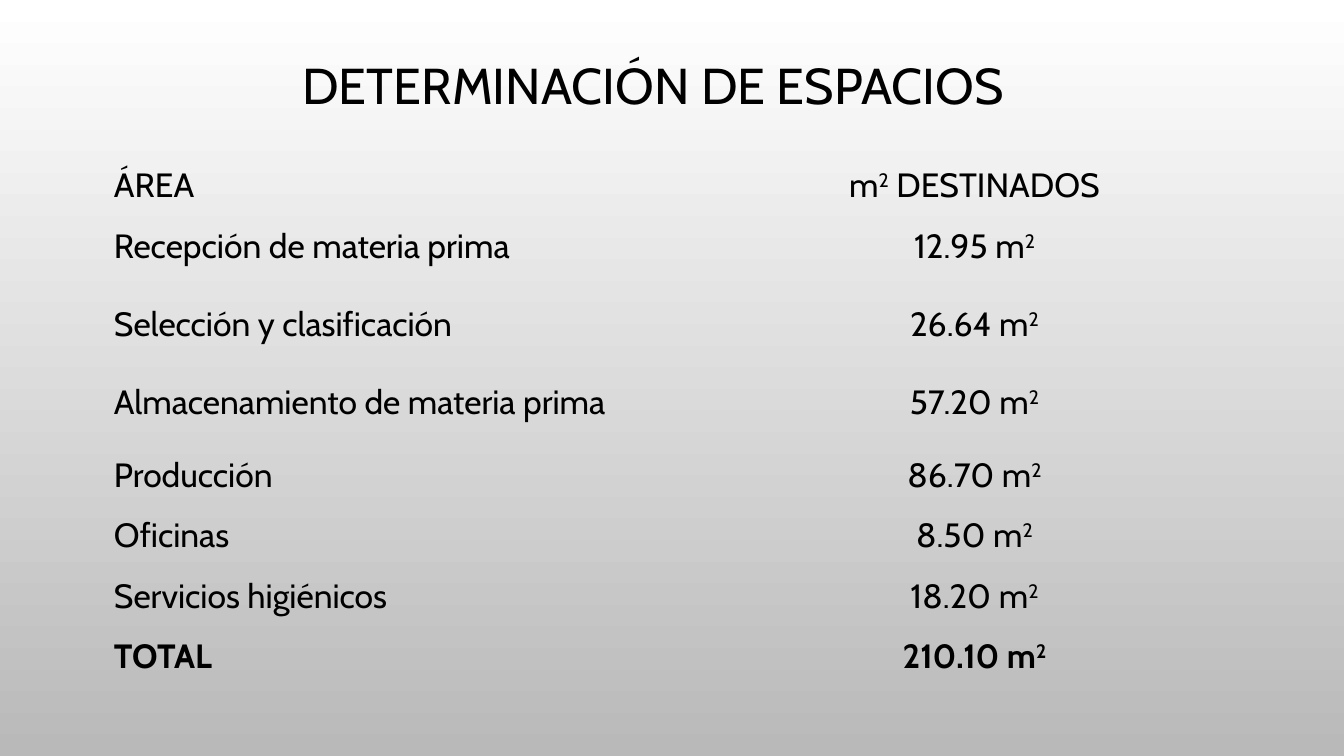
from dataclasses import dataclass

import pptx
import pptx.dml.color
import pptx.enum.text
import pptx.oxml.ns
import pptx.util

SCALE = 914400 / 100.8  # EMU in one px
COLORS = {"text": "000000", "top": "FFFFFF", "base": "B9B9B9"}
FONT = "Cabin"
PLAIN = "{2D5ABB26-0587-4C30-8999-92F81FD0307C}"  # no style, no grid
ALIGN = pptx.enum.text.PP_ALIGN
MIDDLE = pptx.enum.text.MSO_ANCHOR.MIDDLE


@dataclass
class Row:
    area: str
    size: str
    height: int = 44
    bold: bool = False


ROWS = [
    Row("ÁREA", "m² DESTINADOS"),
    Row("Recepción de materia prima", "12.95 m²", 78),
    Row("Selección y clasificación", "26.64 m²", 78),
    Row("Almacenamiento de materia prima", "57.20 m²", 73),
    Row("Producción", "86.70 m²"),
    Row("Oficinas", "8.50 m²"),
    Row("Servicios higiénicos", "18.20 m²"),
    Row("TOTAL", "210.10 m²", bold=True),
]


def px(count: int) -> pptx.util.Emu:
    return pptx.util.Emu(round(count * SCALE))


def color(name: str) -> pptx.dml.color.RGBColor:
    return pptx.dml.color.RGBColor.from_string(COLORS[name])


def apply(target, values: dict) -> None:
    for name, value in values.items():
        setattr(target, name, value)


def write(para, text: str, points: int, bold: bool = False) -> None:
    """Add the text as runs, with each ² as a raised 2."""
    before, mark, after = text.partition("²")
    for part, raised in ((before, False), (mark and "2", True), (after, False)):
        if not part:
            continue
        run = para.add_run()
        run.text = part
        apply(run.font, {"name": FONT, "size": pptx.util.Pt(points), "bold": bold})
        run.font.color.rgb = color("text")
        if raised:
            run._r.get_or_add_rPr().set("baseline", "30000")


def paint(slide) -> None:
    fill = slide.background.fill
    fill.gradient()
    fill.gradient_angle = 270
    for stop, name, place in zip(fill.gradient_stops, ("top", "base"), (0, 1)):
        stop.color.rgb = color(name)
        stop.position = place


def add_title(slide, text: str) -> None:
    frame = slide.shapes.add_textbox(px(82), px(0), px(1142), px(176)).text_frame
    apply(frame, {"word_wrap": True, "vertical_anchor": MIDDLE})
    para = frame.paragraphs[0]
    apply(para, {"alignment": ALIGN.CENTER, "line_spacing": 0.9})
    write(para, text, 36)


def fill_cell(cell, text: str, align, bold: bool) -> None:
    cell.fill.background()
    apply(cell, {"margin_left": px(7), "margin_right": px(7),
                 "margin_top": 0, "margin_bottom": 0})
    para = cell.text_frame.paragraphs[0]
    apply(para, {"alignment": align, "line_spacing": 1.5})
    indent = para._p.get_or_add_pPr()
    indent.set("marL", str(px(50)))
    indent.set("indent", "0")
    write(para, text, 24, bold)


def add_areas(slide, rows: list[Row]) -> None:
    shape = slide.shapes.add_table(len(rows), 2, px(57), px(145), px(1190), px(530))
    table = shape.table
    apply(table, {"first_row": False, "horz_banding": False})
    style = table._tbl.tblPr.find(pptx.oxml.ns.qn("a:tableStyleId"))
    style.text = PLAIN
    for line, row in zip(table.rows, rows):
        line.height = px(row.height)
        for cell, text, align in zip(line.cells, (row.area, row.size),
                                     (ALIGN.LEFT, ALIGN.CENTER)):
            fill_cell(cell, text, align, row.bold)
    shape.height = px(530)


def main() -> None:
    deck = pptx.Presentation()
    apply(deck, {"slide_width": px(1344), "slide_height": px(756)})
    slide = deck.slides.add_slide(deck.slide_layouts[6])
    paint(slide)
    add_title(slide, "DETERMINACIÓN DE ESPACIOS")
    add_areas(slide, ROWS)
    deck.save("out.pptx")


if __name__ == "__main__":
    main()
